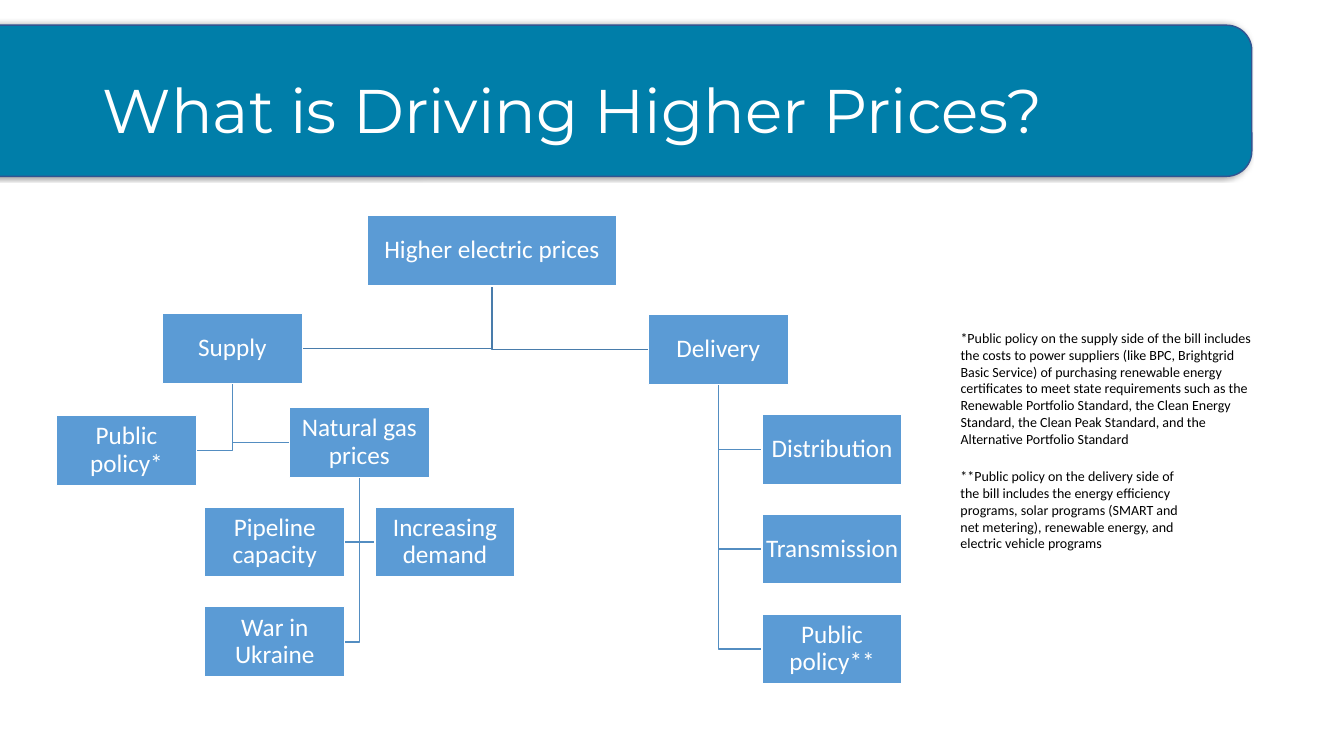
from collections import namedtuple

from lxml.etree import SubElement
from pptx import Presentation
from pptx.dml.color import RGBColor
from pptx.enum.shapes import MSO_SHAPE as Shape
from pptx.enum.text import MSO_ANCHOR as Anchor, MSO_AUTO_SIZE as AutoSize, PP_ALIGN as Align
from pptx.oxml.ns import qn
from pptx.util import Pt

Node = namedtuple("Node", "text parent left top width", defaults=[100.1])

NODE_HEIGHT = 50.1
DELIVERY_TOP = 295.9
DELIVERY_STEP = 71.3

NODES = {
    "root": Node("Higher electric prices", None, 262.1, 154.1, 178.6),
    "supply": Node("Supply", "root", 115.9, 223.9),
    "supply policy": Node("Public policy*", "supply", 40.3, 296.6),
    "gas": Node("Natural gas prices", "supply", 206.6, 290.9),
    "pipeline": Node("Pipeline capacity", "gas", 146.2, 362.2),
    "demand": Node("Increasing demand", "gas", 267.8, 362.2),
    "war": Node("War in Ukraine", "gas", 146.2, 433.4),
    "delivery": Node("Delivery", "root", 463, 224.6),
}
for row, label in enumerate(["Distribution", "Transmission", "Public policy**"]):
    NODES[label] = Node(label, "delivery", 544.3, DELIVERY_TOP + row * DELIVERY_STEP)

SUPPLY_NOTE = (
    "*Public policy on the supply side of the bill includes the costs to power suppliers "
    "(like BPC, Brightgrid Basic Service) of purchasing renewable energy certificates to meet "
    "state requirements such as the Renewable Portfolio Standard, the Clean Energy Standard, "
    "the Clean Peak Standard, and the Alternative Portfolio Standard"
)
DELIVERY_NOTE = (
    "**Public policy on the delivery side of the bill includes the energy efficiency programs, "
    "solar programs (SMART and net metering), renewable energy, and electric vehicle programs"
)


def color(value):
    return RGBColor.from_string(value)


def write(frame, text, size, font, fill, align=Align.LEFT, spacing=1.0):
    frame.word_wrap = True
    para = frame.paragraphs[0]
    para.alignment = align
    para.line_spacing = spacing
    span = para.add_run()
    span.text = text
    span.font.size = Pt(size)
    span.font.name = font
    span.font.color.rgb = color(fill)


def paint(shape, fill, line):
    shape.shadow.inherit = False
    shape.fill.solid()
    shape.fill.fore_color.rgb = color(fill)
    shape.line.color.rgb = color(line)
    shape.line.width = Pt(1)


def add_banner(slide):
    banner = slide.shapes.add_shape(
        Shape.ROUNDED_RECTANGLE, Pt(-25.2), Pt(18), Pt(919.4), Pt(108)
    )
    paint(banner, "007EA9", "325491")
    effects = banner._element.spPr.find(qn("a:effectLst"))
    shadow = SubElement(
        effects, qn("a:outerShdw"), blurRad=str(Pt(4)), dist=str(Pt(3)),
        dir="10800000", algn="ctr", rotWithShape="0",
    )
    tint = SubElement(shadow, qn("a:srgbClr"), val="000000")
    SubElement(tint, qn("a:alpha"), val="40000")
    slide.shapes._spTree.insert(2, banner._element)


def add_title(slide, text):
    title = slide.shapes.title
    title.left, title.top, title.width, title.height = Pt(66.2), Pt(28.8), Pt(828), Pt(104.4)
    frame = title.text_frame
    frame.auto_size = AutoSize.NONE
    frame.vertical_anchor = Anchor.MIDDLE
    write(frame, text, 44, "Montserrat", "FFFFFF", spacing=0.9)


def add_elbow(slide, parent, child, line):
    stem = parent.left + parent.width / 2
    end = child.left if child.left > stem else child.left + child.width
    middle = child.top + NODE_HEIGHT / 2
    builder = slide.shapes.build_freeform(Pt(stem), Pt(parent.top + NODE_HEIGHT))
    builder.add_line_segments([(Pt(stem), Pt(middle)), (Pt(end), Pt(middle))], close=False)
    elbow = builder.convert_to_shape()
    elbow.shadow.inherit = False
    elbow.fill.background()
    elbow.line.color.rgb = color(line)
    elbow.line.width = Pt(1)


def add_node(slide, node):
    box = slide.shapes.add_shape(
        Shape.RECTANGLE, Pt(node.left), Pt(node.top), Pt(node.width), Pt(NODE_HEIGHT)
    )
    paint(box, "5B9BD5", "FFFFFF")
    frame = box.text_frame
    frame.vertical_anchor = Anchor.MIDDLE
    frame.margin_left = frame.margin_right = Pt(0.9)
    frame.margin_top = frame.margin_bottom = Pt(0.9)
    write(frame, node.text, 18, "Calibri", "FFFFFF", Align.CENTER, 0.9)


def add_note(slide, text, top, width, height):
    note = slide.shapes.add_textbox(Pt(679), Pt(top), Pt(width), Pt(height))
    note.text_frame.auto_size = AutoSize.SHAPE_TO_FIT_TEXT
    write(note.text_frame, text, 10, "Calibri", "000000")


def main():
    deck = Presentation()
    deck.slide_width, deck.slide_height = Pt(960), Pt(540)
    slide = deck.slides.add_slide(deck.slide_layouts[5])
    add_banner(slide)
    add_title(slide, "What is Driving Higher Prices?")
    for node in NODES.values():
        if node.parent:
            line = "497CAB" if node.parent == "root" else "538DC1"
            add_elbow(slide, NODES[node.parent], node, line)
    for node in NODES.values():
        add_node(slide, node)
    add_note(slide, SUPPLY_NOTE, 231.8, 224.6, 92.2)
    add_note(slide, DELIVERY_NOTE, 330.5, 170.6, 67.7)
    deck.save("out.pptx")


if __name__ == "__main__":
    main()
